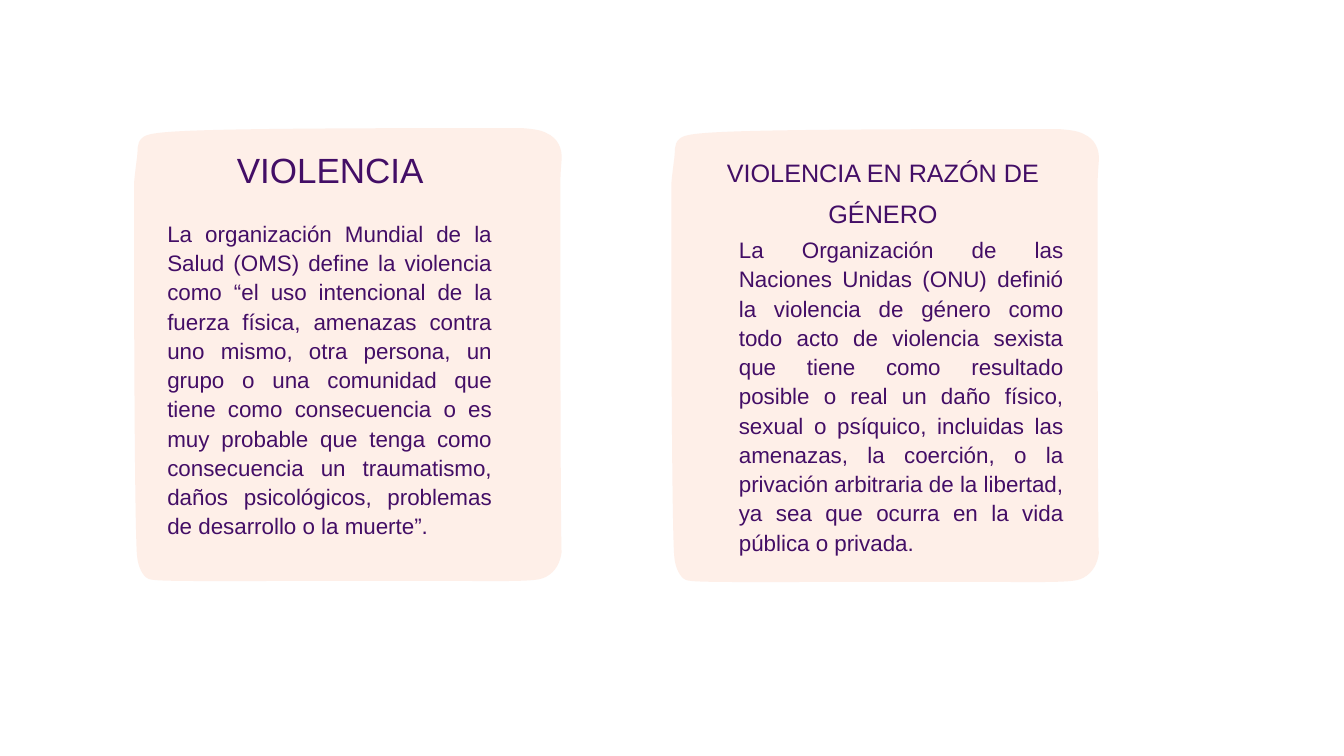
from dataclasses import dataclass

from lxml import etree
from pptx import Presentation
from pptx import util as u
from pptx.dml.color import RGBColor
from pptx.enum import text
from pptx.oxml import ns

COLS, ROWS = 160, 90
CELL = u.Inches(7.5) // ROWS
PEACH, PLUM = "FEEFE8", "430E66"

START = (0.36, 50.9)
CURVES = [
    ((0.36, 50.9), (0, 49.4), (0, 6.6)),
    ((0.1, 5.4), (0.36, 3.5), (0.36, 3.5)),
    ((0.5, 2.8), (0.25, 1.8), (0.95, 1.2)),
    ((1.9, 0.35), (3.4, 0), (46.1, 0)),
    ((47.3, 0.1), (48.4, 0.2), (49.1, 0.6)),
    ((50.5, 1.2), (51, 2.5), (50.9, 3.8)),
    ((50.9, 3.8), (50.75, 5.5), (50.75, 6.8)),
    ((50.75, 49.4), (50.9, 50.5), (50.9, 50.5)),
    ((50.75, 51.7), (50.2, 52.8), (49.1, 53.4)),
    ((48.2, 53.9), (47.2, 54), (37.4, 53.9)),
    ((3.5, 53.9), (2, 54.1), (1.45, 53.5)),
    ((0.85, 53), (0.45, 52), START),
]


@dataclass
class Block:
    col: float
    row: float
    wide: float
    high: float
    size: float
    words: str


@dataclass
class Card:
    col: float
    row: float
    title: Block
    body: Block


TITLE = {"alignment": text.PP_ALIGN.CENTER, "line_spacing": u.Pt(29.5)}
BODY = {"alignment": text.PP_ALIGN.JUSTIFY, "line_spacing": u.Pt(20.9)}
FRAME = {
    "margin_left": 0, "margin_top": 0, "margin_right": 0, "margin_bottom": 0,
    "word_wrap": True, "auto_size": text.MSO_AUTO_SIZE.SHAPE_TO_FIT_TEXT,
}

CARDS = [
    Card(
        15.96, 15.24,
        Block(21.84, 17.76, 34.92, 4.92, 25, "VIOLENCIA"),
        Block(19.92, 25.92, 38.64, 38.64, 16,
              "La organización Mundial de la Salud (OMS) define la violencia como "
              "“el uso intencional de la fuerza física, amenazas contra uno mismo, "
              "otra persona, un grupo o una comunidad que tiene como consecuencia o "
              "es muy probable que tenga como consecuencia un traumatismo, daños "
              "psicológicos, problemas de desarrollo o la muerte”."),
    ),
    Card(
        79.92, 15.36,
        Block(83.64, 17.4, 42.96, 9.6, 18, "VIOLENCIA EN RAZÓN DE GÉNERO"),
        Block(87.96, 27.84, 38.64, 38.64, 16,
              "La Organización de las Naciones Unidas (ONU) definió la violencia de "
              "género como todo acto de violencia sexista que tiene como resultado "
              "posible o real un daño físico, sexual o psíquico, incluidas las "
              "amenazas, la coerción, o la privación arbitraria de la libertad, ya "
              "sea que ocurra en la vida pública o privada."),
    ),
]


def grid(n: float) -> u.Emu:
    return u.Emu(round(n * CELL))


def tint(code: str) -> RGBColor:
    return RGBColor.from_string(code)


def apply(item, look: dict) -> None:
    for key, val in look.items():
        setattr(item, key, val)


def bend(shape) -> None:
    lines = list(shape._element.iter(ns.qn("a:lnTo")))
    for line, (one, two, _) in zip(lines, CURVES):
        curve = etree.Element(ns.qn("a:cubicBezTo"))
        for x, y in (one, two):
            etree.SubElement(curve, ns.qn("a:pt"), x=str(grid(x)), y=str(grid(y)))
        curve.append(line[0])
        line.getparent().replace(line, curve)


def panel(slide, card: Card) -> None:
    first, *rest = [
        (grid(card.col + x), grid(card.row + y))
        for x, y in [START, *(end for _, _, end in CURVES)]
    ]
    form = slide.shapes.build_freeform(*first)
    form.add_line_segments(rest, close=True)
    shape = form.convert_to_shape()
    bend(shape)
    shape.shadow.inherit = False
    shape.fill.solid()
    shape.fill.fore_color.rgb = tint(PEACH)
    shape.line.fill.background()


def write(slide, block: Block, look: dict) -> None:
    box = slide.shapes.add_textbox(
        *map(grid, (block.col, block.row, block.wide, block.high)))
    apply(box.text_frame, FRAME)
    para = box.text_frame.paragraphs[0]
    apply(para, look)
    run = para.add_run()
    run.text = block.words
    apply(run.font, {"name": "Arial", "size": u.Pt(block.size)})
    run.font.color.rgb = tint(PLUM)


def main() -> None:
    deck = Presentation()
    apply(deck, {"slide_width": grid(COLS), "slide_height": grid(ROWS)})
    slide = deck.slides.add_slide(deck.slide_layouts[6])
    for card in CARDS:
        panel(slide, card)
    for card in CARDS:
        write(slide, card.title, TITLE)
        write(slide, card.body, BODY)
    deck.save("out.pptx")


if __name__ == "__main__":
    main()
